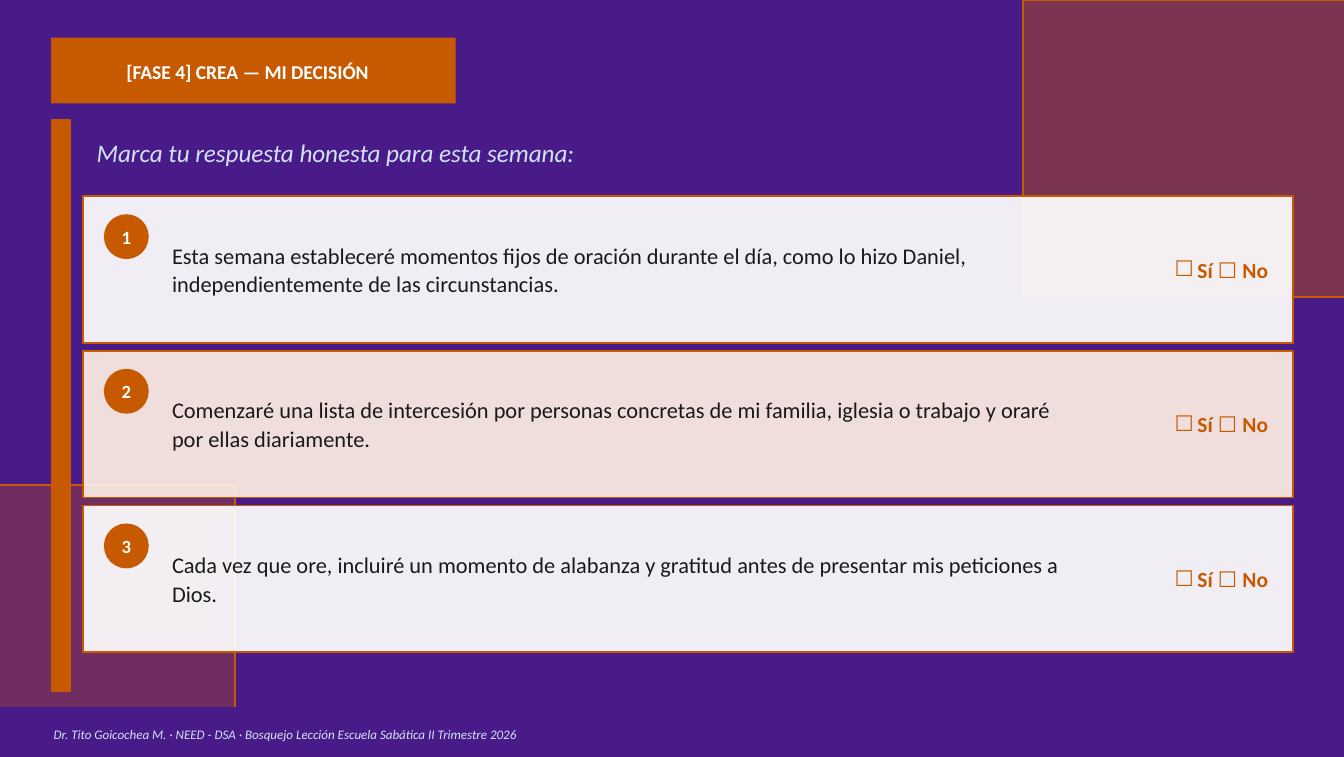
from dataclasses import dataclass

import pptx
import pptx.dml.color
import pptx.enum.shapes
import pptx.enum.text
import pptx.oxml.ns
import pptx.util
from lxml import etree
from pptx.dml.color import RGBColor
from pptx.util import Inches

PURPLE = RGBColor(0x49, 0x1B, 0x89)
ORANGE = RGBColor(0xC7, 0x5A, 0x00)
WHITE = RGBColor(0xFF, 0xFF, 0xFF)
PEACH = RGBColor(0xFF, 0xEF, 0xE4)
PALE_BLUE = RGBColor(0xD0, 0xE3, 0xF5)
INK = RGBColor(0x1A, 0x1A, 0x1A)

RECT = pptx.enum.shapes.MSO_SHAPE.RECTANGLE
OVAL = pptx.enum.shapes.MSO_SHAPE.OVAL
ALIGN = pptx.enum.text.PP_ALIGN
ANCHOR = pptx.enum.text.MSO_ANCHOR

SLIDE_W, SLIDE_H = 10, 5.63
FOOTER_TOP = 5.26
CARD_LEFT, CARD_TOP, CARD_W, CARD_H = 0.62, 1.46, 9, 1.09
CARD_PITCH = 1.15


@dataclass(frozen=True)
class Commitment:
    lines: tuple[str, ...]
    fill: RGBColor


@dataclass(frozen=True)
class Style:
    size: float
    color: RGBColor
    bold: bool = False
    italic: bool = False


LABEL = Style(10.5, WHITE, bold=True)
PROMPT = Style(13.5, PALE_BLUE, italic=True)
NUMBER = Style(10, WHITE, bold=True)
BODY = Style(12, INK)
ANSWER = Style(11.5, ORANGE, bold=True)
CREDIT = Style(7, PALE_BLUE, italic=True)

COMMITMENTS = (
    Commitment(("Esta semana estableceré momentos fijos de oración durante el día, como lo hizo Daniel,",
                "independientemente de las circunstancias."), WHITE),
    Commitment(("Comenzaré una lista de intercesión por personas concretas de mi familia, iglesia o trabajo y oraré",
                "por ellas diariamente."), PEACH),
    Commitment(("Cada vez que ore, incluiré un momento de alabanza y gratitud antes de presentar mis peticiones a",
                "Dios."), WHITE),
)


def add_block(slide, kind, left: float, top: float, width: float, height: float,
              fill: RGBColor, opacity: int = 100, line: RGBColor | None = None):
    """Add a flat shape; opacity is a percentage."""
    block = slide.shapes.add_shape(kind, Inches(left), Inches(top), Inches(width), Inches(height))
    block.shadow.inherit = False
    block.fill.solid()
    block.fill.fore_color.rgb = fill
    if opacity < 100:
        color = block.fill._xPr.find(".//" + pptx.oxml.ns.qn("a:srgbClr"))
        etree.SubElement(color, pptx.oxml.ns.qn("a:alpha"), val=str(opacity * 1000))
    if line is None:
        block.line.fill.background()
    else:
        block.line.color.rgb = line
        block.line.width = pptx.util.Pt(1)
    return block


def add_outline(slide, *points: tuple[float, float]) -> None:
    """Draw an open orange line through the points."""
    start, *rest = [(Inches(x), Inches(y)) for x, y in points]
    builder = slide.shapes.build_freeform(*start)
    builder.add_line_segments(rest, close=False)
    outline = builder.convert_to_shape()
    outline.shadow.inherit = False
    outline.fill.background()
    outline.line.color.rgb = ORANGE
    outline.line.width = pptx.util.Pt(1)


def style_paragraph(paragraph, style: Style) -> None:
    font = paragraph.font
    font.name = "Calibri"
    font.size = pptx.util.Pt(style.size)
    font.bold = style.bold
    font.italic = style.italic
    font.color.rgb = style.color


def set_frame(frame, left: float = 0, top: float = 0) -> None:
    """Set the left and top insets and clear the others."""
    frame.margin_left, frame.margin_top = Inches(left), Inches(top)
    frame.margin_right = frame.margin_bottom = 0


def add_text(slide, left: float, top: float, width: float, height: float,
             lines: tuple[str, ...], style: Style):
    frame = slide.shapes.add_textbox(
        Inches(left), Inches(top), Inches(width), Inches(height)).text_frame
    set_frame(frame, 0.01, 0.03)
    frame.word_wrap = False
    frame.text = "\n".join(lines)
    for index, paragraph in enumerate(frame.paragraphs):
        paragraph.alignment = ALIGN.LEFT
        if index:
            paragraph.space_before = pptx.util.Pt(0.8)
        style_paragraph(paragraph, style)
    return frame


def label_block(block, text: str, style: Style, align, left: float = 0, top: float = 0) -> None:
    frame = block.text_frame
    set_frame(frame, left, top)
    frame.word_wrap = False
    frame.vertical_anchor = ANCHOR.MIDDLE
    frame.text = text
    frame.paragraphs[0].alignment = align
    style_paragraph(frame.paragraphs[0], style)


def add_answer(slide, top: float) -> None:
    """Add the yes/no boxes; the first box is the bullet of the line."""
    frame = slide.shapes.add_textbox(
        Inches(8.72), Inches(top), Inches(0.8), Inches(0.22)).text_frame
    set_frame(frame, 0, 0.03)
    frame.word_wrap = False
    paragraph = frame.paragraphs[0]
    properties = paragraph._p.get_or_add_pPr()
    properties.set("marL", str(Inches(0.19)))
    properties.set("indent", str(-Inches(0.17)))
    qn = pptx.oxml.ns.qn
    etree.SubElement(properties, qn("a:buFont"), typeface="Roboto")
    etree.SubElement(properties, qn("a:buChar"), char="☐")
    tabs = etree.SubElement(properties, qn("a:tabLst"))
    etree.SubElement(tabs, qn("a:tab"), pos=str(Inches(0.19)), algn="l")
    style_paragraph(paragraph, ANSWER)
    for text, font_name in (("Sí ", "Calibri"), ("☐ ", "Roboto"), ("No", "Calibri")):
        run = paragraph.add_run()
        run.text = text
        run.font.name = font_name


def add_commitment(slide, number: int, commitment: Commitment) -> None:
    top = CARD_TOP + (number - 1) * CARD_PITCH
    add_block(slide, RECT, CARD_LEFT, top, CARD_W, CARD_H, commitment.fill, 92, ORANGE)
    badge = add_block(slide, OVAL, 0.78, top + 0.14, 0.32, 0.32, ORANGE, line=ORANGE)
    label_block(badge, str(number), NUMBER, ALIGN.CENTER)
    add_text(slide, 1.27, top + 0.31, 6.95, 0.44, commitment.lines, BODY)
    add_answer(slide, top + 0.42)


def main() -> None:
    deck = pptx.Presentation()
    deck.slide_width, deck.slide_height = Inches(SLIDE_W), Inches(SLIDE_H)
    slide = deck.slides.add_slide(deck.slide_layouts[6])
    slide.background.fill.solid()
    slide.background.fill.fore_color.rgb = PURPLE

    add_block(slide, RECT, 7.61, 0, 2.39, 2.21, ORANGE, 40)
    add_outline(slide, (SLIDE_W, 0), (7.61, 0), (7.61, 2.21))
    add_outline(slide, (CARD_LEFT + CARD_W, 2.21), (SLIDE_W, 2.21))
    add_block(slide, RECT, 0, 3.61, 1.75, FOOTER_TOP - 3.61, ORANGE, 30)
    add_outline(slide, (1.75, FOOTER_TOP), (1.75, 3.61), (0, 3.61))
    add_block(slide, RECT, 0.39, 0.89, 0.13, 4.25, ORANGE, line=ORANGE)

    phase = add_block(slide, RECT, 0.38, 0.28, 3.01, 0.49, ORANGE)
    label_block(phase, "[FASE 4] CREA — MI DECISIÓN", LABEL, ALIGN.LEFT, left=0.56, top=0.02)
    add_text(slide, 0.71, 0.99, 3.73, 0.26,
             ("Marca tu respuesta honesta para esta semana:",), PROMPT)

    for number, commitment in enumerate(COMMITMENTS, start=1):
        add_commitment(slide, number, commitment)

    add_block(slide, RECT, 0, FOOTER_TOP, SLIDE_W, SLIDE_H - FOOTER_TOP, PURPLE)
    add_text(slide, 0.39, 5.37, 3.77, 0.16,
             ("Dr. Tito Goicochea M. · NEED - DSA · Bosquejo Lección Escuela Sabática II Trimestre 2026",),
             CREDIT)
    deck.save("out.pptx")


if __name__ == "__main__":
    main()
